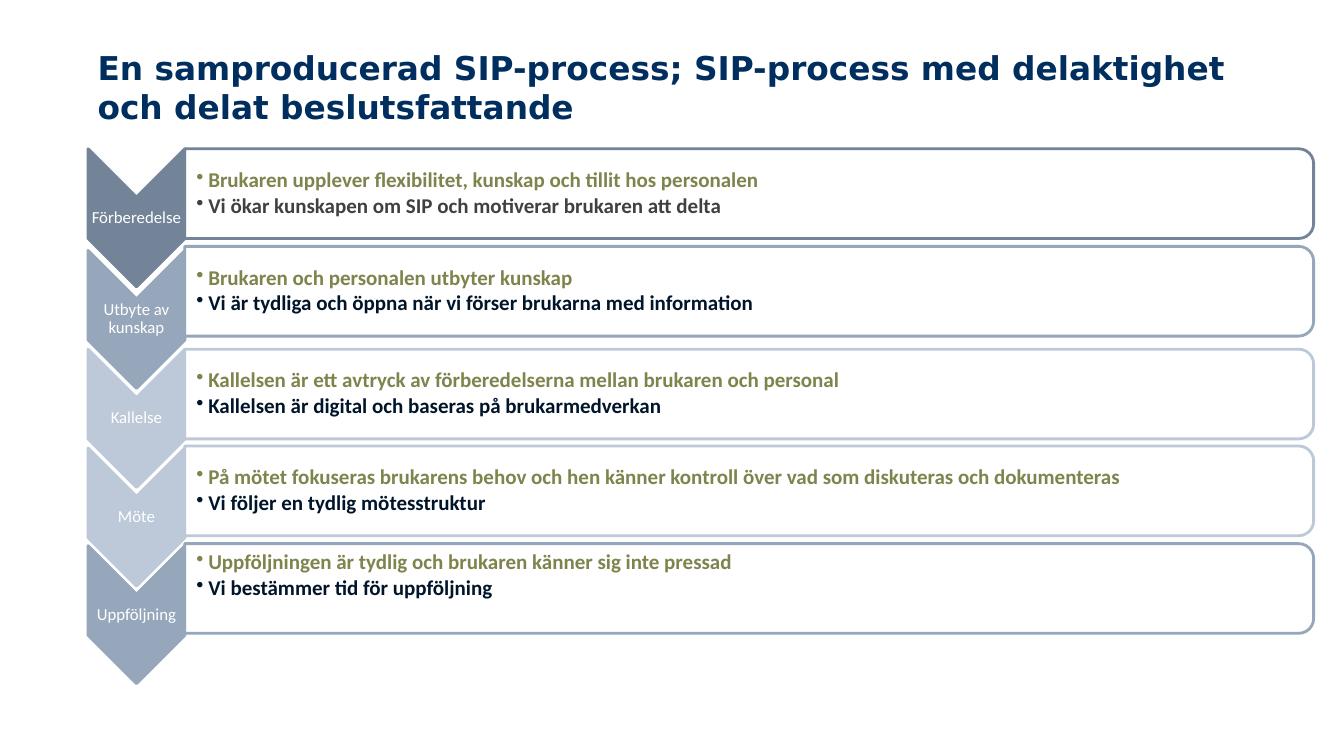
import pptx
import pptx.dml.color
import pptx.enum.shapes
import pptx.enum.text
import pptx.oxml.ns
import pptx.util
import lxml.etree

Cm = pptx.util.Cm
Pt = pptx.util.Pt
Kind = pptx.enum.shapes.MSO_SHAPE
Anchor = pptx.enum.text.MSO_ANCHOR
Align = pptx.enum.text.PP_ALIGN
qn = pptx.oxml.ns.qn

theme = {
    "navy": "002F5F", "ink": "00152A", "grey": "404040", "olive": "7F834C",
    "white": "FFFFFF", "dark": "738498", "mid": "96A6BB", "pale": "BDC9D9",
    "title": 23.4, "body": 15, "label": 12,
    "head": "DejaVu Sans", "text": "Calibri",
}

# Step name, colour, chevron centre, panel centre, bottom inset, second colour, lines
steps = [
    ("Förberedelse", "dark", 5.49, 4.88, 0.03, "grey",
     ["Brukaren upplever flexibilitet, kunskap och tillit hos personalen",
      "Vi ökar kunskapen om SIP och motiverar brukaren att delta"]),
    ("Utbyte av kunskap", "mid", 8.05, 7.34, 0.03, "ink",
     ["Brukaren och personalen utbyter kunskap",
      "Vi är tydliga och öppna när vi förser brukarna med information"]),
    ("Kallelse", "pale", 10.54, 9.93, 0.03, "ink",
     ["Kallelsen är ett avtryck av förberedelserna mellan brukaren och personal",
      "Kallelsen är digital och baseras på brukarmedverkan"]),
    ("Möte", "pale", 13.03, 12.37, 0.03, "ink",
     ["På mötet fokuseras brukarens behov och hen känner kontroll över vad som "
      "diskuteras och dokumenteras",
      "Vi följer en tydlig mötesstruktur"]),
    ("Uppföljning", "mid", 15.49, 14.83, 0.69, "ink",
     ["Uppföljningen är tydlig och brukaren känner sig inte pressad",
      "Vi bestämmer tid för uppföljning"]),
]

deck = pptx.Presentation()
deck.slide_width, deck.slide_height = Cm(33.87), Cm(19.05)
slide = deck.slides.add_slide(deck.slide_layouts[6])


def turned(kind, x, y, width, height, fill, line):
    """Add a shape centred on x, y and turned a quarter clockwise."""
    shape = slide.shapes.add_shape(kind, Cm(x - width / 2), Cm(y - height / 2),
                                   Cm(width), Cm(height))
    shape.rotation = 90
    shape.shadow.inherit = False
    shape.fill.solid()
    shape.fill.fore_color.rgb = pptx.dml.color.RGBColor.from_string(theme[fill])
    shape.line.color.rgb = pptx.dml.color.RGBColor.from_string(theme[line])
    shape.line.width = Pt(2)
    return shape


def write(box, lines, form, frame, para, bullet=False):
    """Add a text box; each line is a pair of text and colour."""
    area = slide.shapes.add_textbox(*[Cm(n) for n in box]).text_frame
    for key, value in {"word_wrap": True, **frame}.items():
        setattr(area, key, value)
    for i, (text, tint) in enumerate(lines):
        item = area.paragraphs[0] if i == 0 else area.add_paragraph()
        for key, value in para.items():
            setattr(item, key, value)
        if bullet:
            props = item._p.get_or_add_pPr()
            props.set("marL", str(Cm(0.3)))
            props.set("indent", str(-Cm(0.3)))
            lxml.etree.SubElement(props, qn("a:buChar")).set("char", "•")
        run = item.add_run()
        run.text = text
        for key, value in form.items():
            setattr(run.font, key, value)
        run.font.color.rgb = pptx.dml.color.RGBColor.from_string(theme[tint])


# Title
write((2.21, 1.09, 29.44, 2.21),
      [("En samproducerad SIP-process; SIP-process med delaktighet "
        "och delat beslutsfattande", "navy")],
      {"name": theme["head"], "size": Pt(theme["title"]), "bold": True},
      {"vertical_anchor": Anchor.BOTTOM}, {})

# Formats for the steps
thin = Cm(0.03)
tight = {"vertical_anchor": Anchor.MIDDLE, "margin_left": thin,
         "margin_right": thin, "margin_top": thin, "margin_bottom": thin}
small = {"name": theme["text"], "size": Pt(theme["label"])}
strong = {"name": theme["text"], "size": Pt(theme["body"]), "bold": True}

for name, hue, mid, row, foot, tint, lines in steps:
    # Chevron and its label
    turned(Kind.CHEVRON, 3.44, mid, 3.48, 2.44, hue, hue)
    write((2.22, mid - 0.52, 2.44, 1.04), [(name, "white")], small, tight,
          {"alignment": Align.CENTER, "line_spacing": 0.9})

    # Panel and its bullets
    panel = turned(Kind.ROUND_2_SAME_RECTANGLE, 18.88, row, 2.26, 28.45,
                   "white", hue)
    shade = panel._element.spPr.find(qn("a:solidFill"))[0]
    lxml.etree.SubElement(shade, qn("a:alpha")).set("val", "90000")
    write((4.65, row - 1.03, 28.35, 2.06), zip(lines, ("olive", tint)), strong,
          {**tight, "margin_left": Cm(0.3), "margin_bottom": Cm(foot)},
          {"line_spacing": 0.9, "space_after": Pt(2.25)}, bullet=True)

deck.save("out.pptx")
